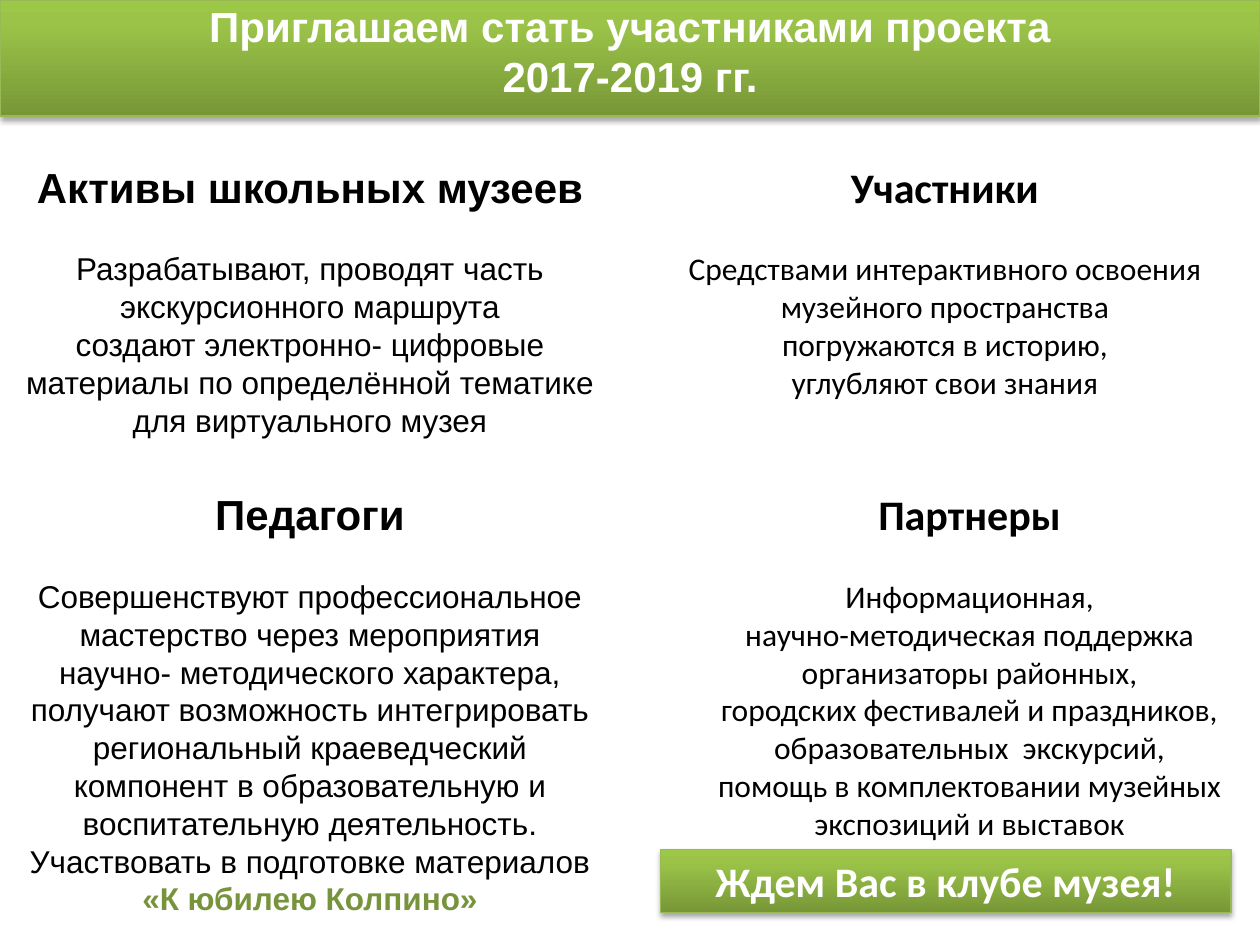
from copy import deepcopy
from dataclasses import dataclass

from lxml.etree import SubElement
from pptx import Presentation
from pptx.dml.color import RGBColor
from pptx.enum.shapes import MSO_SHAPE
from pptx.enum.text import MSO_ANCHOR, MSO_AUTO_SIZE, PP_ALIGN
from pptx.oxml.ns import qn
from pptx.util import Inches, Pt

BLACK, WHITE, ACCENT, EDGE = "000000", "FFFFFF", "77933C", "98B955"
GRADIENT = [(0, "779737"), (0.8, "9BC348"), (1, "9DC746")]
HEAD, BODY = 24, 18
LEADING = 1.2  # line height relative to text size


@dataclass
class Section:
    heading: str
    lines: list[str]
    closing: str = ""


@dataclass
class Column:
    box: tuple[float, float, float, float]
    font: str
    sections: list[Section]


COLUMNS = [
    Column((0, 1.23, 4.92, 6.06), "Arial", [
        Section("Активы школьных музеев", [
            "Разрабатывают, проводят часть экскурсионного маршрута",
            "создают электронно- цифровые материалы по определённой "
            "тематике для виртуального музея",
        ]),
        Section("Педагоги", [
            "Совершенствуют профессиональное мастерство через мероприятия",
            "научно- методического характера,",
            "получают возможность интегрировать региональный краеведческий "
            "компонент в образовательную и воспитательную деятельность.",
            "Участвовать в подготовке материалов",
        ], closing="«К юбилею Колпино»"),
    ]),
    Column((5, 1.23, 5, 2.5), "Calibri", [
        Section("Участники", [
            "Средствами интерактивного освоения музейного пространства",
            "погружаются в историю,",
            "углубляют свои знания",
        ]),
    ]),
    Column((5.39, 3.83, 4.61, 2.93), "Calibri", [
        Section("Партнеры", [
            "Информационная,",
            "научно-методическая поддержка",
            "организаторы районных,",
            "городских фестивалей и праздников,",
            "образовательных  экскурсий,",
            "помощь в комплектовании музейных экспозиций и выставок",
        ]),
    ]),
]


def rgb(value: str) -> RGBColor:
    return RGBColor.from_string(value)


def write(tf, text: str, *, font: str, size: int = BODY, color: str = BLACK,
          bold: bool = False, before: float = 0, after: float = 0) -> None:
    """Add a centred paragraph, using the first one while it is still empty."""
    p = tf.paragraphs[0] if not tf.text else tf.add_paragraph()
    p.alignment = PP_ALIGN.CENTER
    p.line_spacing = Pt(size * LEADING)
    p.space_before, p.space_after = Pt(before), Pt(after)
    r = p.add_run()
    r.text = text
    r.font.name, r.font.size, r.font.bold = font, Pt(size), bold
    r.font.color.rgb = rgb(color)


def prepare(tf, anchor=MSO_ANCHOR.TOP):
    tf.word_wrap = True
    tf.auto_size = MSO_AUTO_SIZE.NONE
    tf.vertical_anchor = anchor
    tf.margin_left = tf.margin_right = Inches(0.1)
    tf.margin_top = tf.margin_bottom = Inches(0.05)
    return tf


def style_panel(s) -> None:
    """Give a shape the green gradient, thin edge and soft shadow."""
    s.fill.gradient()
    s.fill.gradient_angle = 90
    sp_pr = s.element.spPr
    stops = sp_pr.find(".//" + qn("a:gsLst"))
    stops.append(deepcopy(stops[0]))
    for stop, (position, color) in zip(s.fill.gradient_stops, GRADIENT):
        stop.position = position
        stop.color.rgb = rgb(color)
    s.line.color.rgb = rgb(EDGE)
    s.line.width = Pt(0.75)
    s.shadow.inherit = False
    shadow = SubElement(sp_pr.find(qn("a:effectLst")), qn("a:outerShdw"),
                        blurRad=str(Pt(3.1)), dist=str(Pt(1.8)),
                        dir="5400000", rotWithShape="0")
    color = SubElement(shadow, qn("a:srgbClr"), val=BLACK)
    SubElement(color, qn("a:alpha"), val="35000")


def add_title(slide, lines: list[str]) -> None:
    s = slide.shapes.title
    s.left, s.top, s.width, s.height = map(Inches, (0, 0, 10, 0.92))
    style_panel(s)
    tf = prepare(s.text_frame)
    tf.margin_top = 0
    for line in lines:
        write(tf, line, font="Arial", size=HEAD, color=WHITE, bold=True)


def add_column(slide, column: Column) -> None:
    tf = prepare(slide.shapes.add_textbox(*map(Inches, column.box)).text_frame)
    for i, section in enumerate(column.sections):
        write(tf, section.heading, font=column.font, size=HEAD, bold=True,
              before=HEAD * LEADING if i else 0, after=BODY * LEADING)
        for line in section.lines:
            write(tf, line, font=column.font)
        if section.closing:
            write(tf, section.closing, font=column.font, color=ACCENT, bold=True)


def add_invitation(slide, text: str) -> None:
    s = slide.shapes.add_shape(MSO_SHAPE.RECTANGLE,
                               *map(Inches, (5.24, 6.74, 4.53, 0.5)))
    style_panel(s)
    tf = prepare(s.text_frame, MSO_ANCHOR.MIDDLE)
    write(tf, text, font="Calibri", size=HEAD, color=WHITE, bold=True)


def main() -> None:
    prs = Presentation()
    prs.slide_width, prs.slide_height = Inches(10), Inches(7.5)
    slide = prs.slides.add_slide(prs.slide_layouts[5])
    add_title(slide, ["Приглашаем стать участниками проекта", "2017-2019 гг."])
    for column in COLUMNS:
        add_column(slide, column)
    add_invitation(slide, "Ждем Вас в клубе музея!")
    prs.save("out.pptx")


if __name__ == "__main__":
    main()
